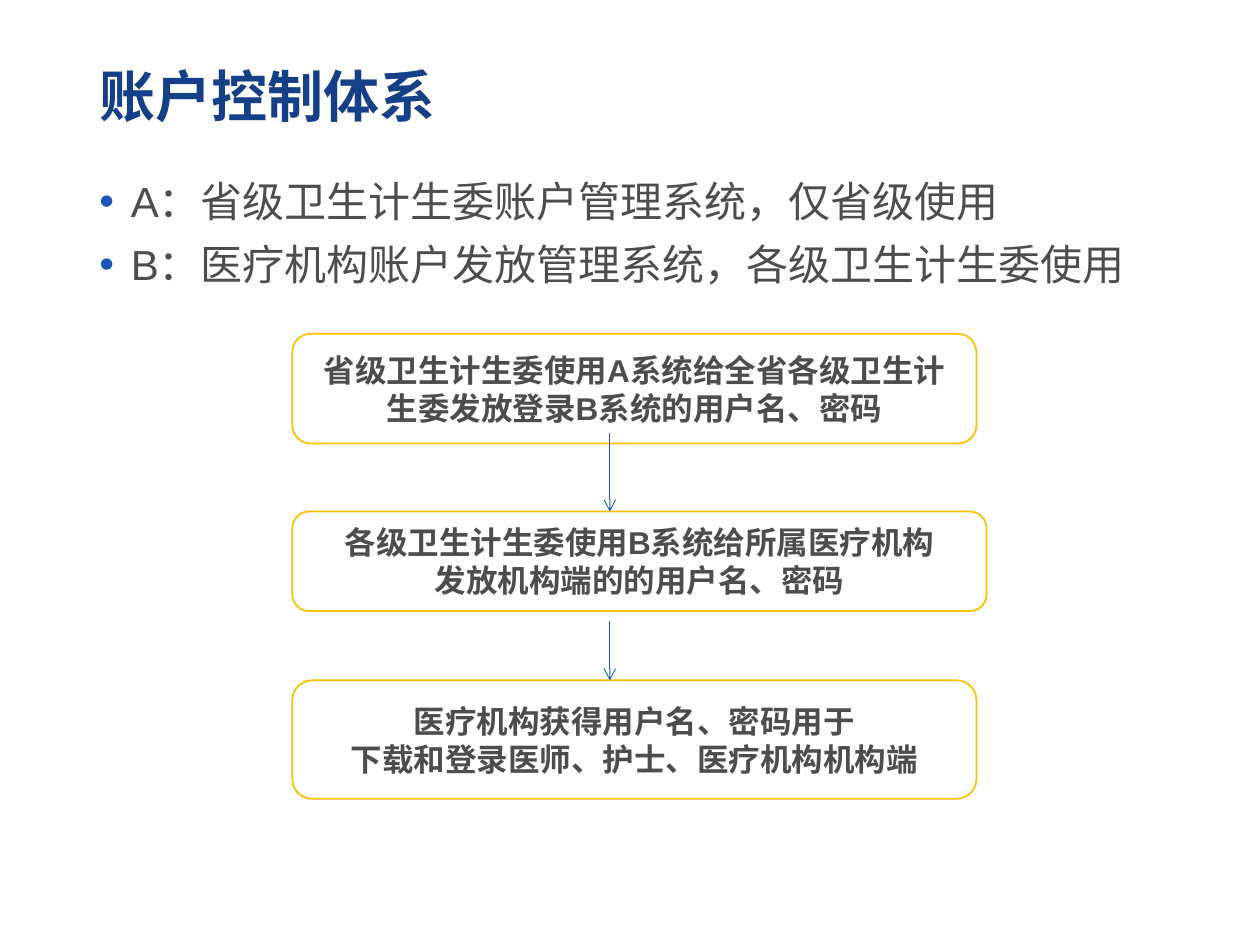
from lxml import etree
from pptx import Presentation
from pptx.dml.color import RGBColor
from pptx.enum.shapes import MSO_CONNECTOR, MSO_SHAPE
from pptx.enum.text import MSO_ANCHOR, PP_ALIGN
from pptx.oxml.ns import qn
from pptx.util import Inches, Pt

ROUNDED = MSO_SHAPE.ROUNDED_RECTANGLE
STRAIGHT = MSO_CONNECTOR.STRAIGHT
MIDDLE, TOP = MSO_ANCHOR.MIDDLE, MSO_ANCHOR.TOP
LEFT, CENTER = PP_ALIGN.LEFT, PP_ALIGN.CENTER

NAVY = RGBColor(0x15, 0x40, 0x88)
BLUE = RGBColor(0x1C, 0x56, 0xB6)
GRAY = RGBColor(0x4D, 0x4D, 0x4D)
AMBER = RGBColor(0xFF, 0xC0, 0x00)
WHITE = RGBColor(0xFF, 0xFF, 0xFF)

TITLE_FONT = {"name": "Arial", "size": Pt(32), "bold": True}
BODY_FONT = {"name": "Arial", "size": Pt(24), "bold": False}
STEP_FONT = {"name": "Arial", "size": Pt(18), "bold": True}

MARGIN, CONTENT_WIDTH = Inches(0.69), Inches(8.62)
STEP_LEFT, ARROW_X = Inches(2.32), Inches(4.84)


def write(box, lines, font, color, align, anchor, spacing=1.0, bullet=False):
    frame = box.text_frame
    frame.word_wrap = True
    frame.vertical_anchor = anchor
    for index, line in enumerate(lines):
        para = frame.paragraphs[0] if index == 0 else frame.add_paragraph()
        para.alignment = align
        para.line_spacing = spacing
        if bullet:
            para.space_before = Pt(10 if index else 0)
            props = para._p.get_or_add_pPr()
            props.set("marL", str(Inches(0.25)))
            props.set("indent", str(-Inches(0.25)))
            bullet_color = etree.SubElement(props, qn("a:buClr"))
            etree.SubElement(bullet_color, qn("a:srgbClr"), val=str(BLUE))
            etree.SubElement(props, qn("a:buFont"), typeface="Arial")
            etree.SubElement(props, qn("a:buChar"), char="•")
        span = para.add_run()
        span.text = line
        for name, value in font.items():
            setattr(span.font, name, value)
        span.font.color.rgb = color


deck = Presentation()
deck.slide_width, deck.slide_height = Inches(10), Inches(7.5)
page = deck.slides.add_slide(deck.slide_layouts[5])

# Title
title = page.shapes.title
title.left, title.top = MARGIN, Inches(0.39)
title.width, title.height = CONTENT_WIDTH, Inches(0.79)
write(title, ["账户控制体系"], TITLE_FONT, NAVY, LEFT, MIDDLE, 0.9)

# The two systems
systems = page.shapes.add_textbox(MARGIN, Inches(1.39), CONTENT_WIDTH, Inches(5.37))
write(systems, ["A：省级卫生计生委账户管理系统，仅省级使用",
                "B：医疗机构账户发放管理系统，各级卫生计生委使用"],
      BODY_FONT, GRAY, LEFT, TOP, 0.9, bullet=True)

# Steps: top, width, height, lines
steps = [
    (2.65, 5.43, 0.87, ["省级卫生计生委使用A系统给全省各级卫生计生委发放登录B系统的用户名、密码"]),
    (4.06, 5.51, 0.79, ["各级卫生计生委使用B系统给所属医疗机构", "发放机构端的的用户名、密码"]),
    (5.40, 5.43, 0.94, ["医疗机构获得用户名、密码用于", "下载和登录医师、护士、医疗机构机构端"]),
]
for top, width, height, lines in steps:
    step = page.shapes.add_shape(ROUNDED, STEP_LEFT, Inches(top),
                                 Inches(width), Inches(height))
    step.shadow.inherit = False
    step.fill.solid()
    step.fill.fore_color.rgb = WHITE
    step.line.color.rgb = AMBER
    step.line.width = Pt(1)
    write(step, lines, STEP_FONT, GRAY, CENTER, MIDDLE)

# Arrows down to the second and third steps, left of the box centres
for start, (end, *_) in zip((3.44, 4.93), steps[1:]):
    arrow = page.shapes.add_connector(STRAIGHT, ARROW_X, Inches(start),
                                      ARROW_X, Inches(end))
    arrow.line.color.rgb = BLUE
    arrow.line.width = Pt(0.5)
    etree.SubElement(arrow.line._get_or_add_ln(), qn("a:tailEnd"), type="arrow")
    etree.SubElement(arrow._element.spPr, qn("a:effectLst"))

deck.save("out.pptx")
